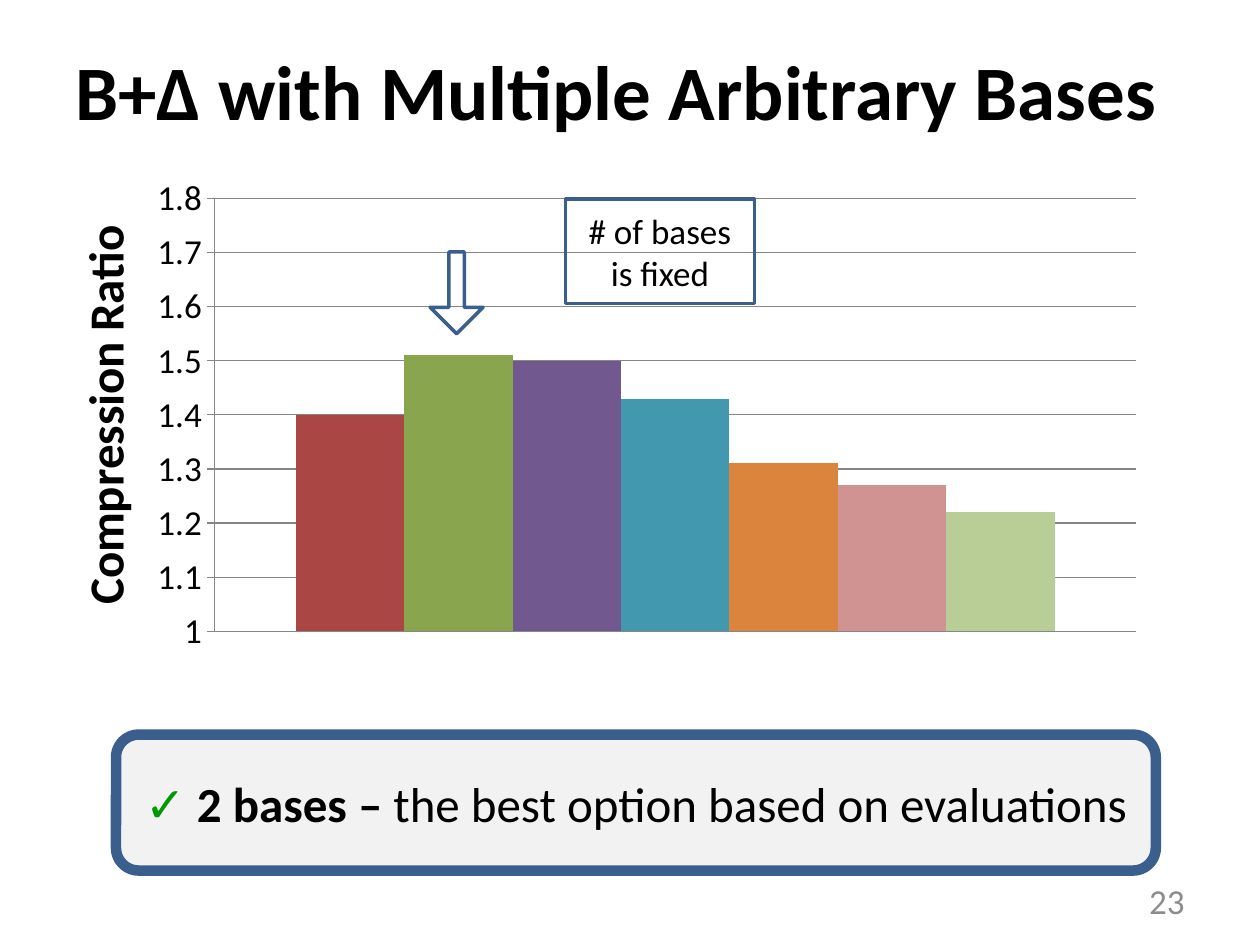
from lxml.etree import SubElement, Element
from pptx import Presentation
from pptx.chart.data import CategoryChartData
from pptx.dml.color import RGBColor
from pptx.enum.chart import XL_CHART_TYPE as ChartType, XL_TICK_MARK as TickMark
from pptx.enum.shapes import MSO_SHAPE as Shape
from pptx.enum.text import MSO_ANCHOR as Anchor, PP_ALIGN as Align
from pptx.oxml.ns import qn
from pptx.util import Cm, Pt

FONT = "Calibri"
BLACK = RGBColor(0x00, 0x00, 0x00)
GRAY = RGBColor(0x8C, 0x8C, 0x8C)
GRID = RGBColor(0x86, 0x86, 0x86)
BLUE = RGBColor(0x3A, 0x5F, 0x8C)
GREEN = RGBColor(0x00, 0x99, 0x00)
PALE = RGBColor(0xF2, 0xF2, 0xF2)

# Compression ratio, bar colour
BARS = [
    (1.4, RGBColor(0xAA, 0x46, 0x43)),
    (1.51, RGBColor(0x89, 0xA5, 0x4E)),
    (1.5, RGBColor(0x71, 0x58, 0x8F)),
    (1.43, RGBColor(0x41, 0x98, 0xAF)),
    (1.31, RGBColor(0xDB, 0x84, 0x3D)),
    (1.27, RGBColor(0xD0, 0x93, 0x92)),
    (1.22, RGBColor(0xB9, 0xCD, 0x96)),
]


def add_text(frame, text, size=20, color=BLACK, bold=False, align=Align.CENTER):
    """Append a run to the frame's first paragraph."""
    frame.word_wrap = True
    frame.vertical_anchor = Anchor.MIDDLE
    paragraph = frame.paragraphs[0]
    paragraph.alignment = align
    run = paragraph.add_run()
    run.text = text
    run.font.name = FONT
    run.font.size = Pt(size)
    run.font.bold = bold
    run.font.color.rgb = color


def set_layout(parent, index, **settings):
    """Give a chart part a manual layout, as fractions of the chart."""
    for old_layout in parent.findall(qn("c:layout")):
        parent.remove(old_layout)
    layout = Element(qn("c:layout"))
    parent.insert(index, layout)
    manual = SubElement(layout, qn("c:manualLayout"))
    for name, value in settings.items():
        SubElement(manual, qn(f"c:{name}")).set("val", str(value))


presentation = Presentation()
presentation.slide_width = Cm(25.4)
presentation.slide_height = Cm(19.05)
slide = presentation.slides.add_slide(presentation.slide_layouts[5])

title = slide.shapes.title
title.left, title.top, title.width, title.height = Cm(1), Cm(0.22), Cm(22.86), Cm(3.18)
add_text(title.text_frame, "B+Δ with Multiple Arbitrary Bases", size=44, bold=True)

page_number = slide.shapes.add_textbox(Cm(18.21), Cm(17.65), Cm(5.92), Cm(1.02))
add_text(page_number.text_frame, "23", color=GRAY, align=Align.RIGHT)

# Chart: one unnamed series per bar, so that the bars touch
chart_data = CategoryChartData()
chart_data.categories = [""]
for ratio, _ in BARS:
    chart_data.add_series("", [ratio])
chart = slide.shapes.add_chart(
    ChartType.COLUMN_CLUSTERED, Cm(1.27), Cm(3.38), Cm(22.63), Cm(11), chart_data
).chart
chart.has_title = False
chart.has_legend = False
chart.font.name = FONT
chart.font.size = Pt(20)
chart.font.color.rgb = BLACK

plot = chart.plots[0]
plot.gap_width = 150
plot.overlap = 0
plot.vary_by_categories = False
for series, (_, color) in zip(plot.series, BARS):
    series.format.fill.solid()
    series.format.fill.fore_color.rgb = color

chart.category_axis.visible = False
ratio_axis = chart.value_axis
ratio_axis.minimum_scale = 1
ratio_axis.maximum_scale = 1.8
ratio_axis.major_unit = 0.1
ratio_axis.major_tick_mark = TickMark.OUTSIDE
ratio_axis.tick_labels.number_format = "General"
ratio_axis.tick_labels.number_format_is_linked = False
ratio_axis.has_major_gridlines = True
for line in (ratio_axis.format.line, ratio_axis.major_gridlines.format.line):
    line.color.rgb = GRID
    line.width = Pt(0.75)

axis_title = ratio_axis.axis_title
add_text(axis_title.text_frame, "Compression Ratio", size=28, bold=True)
axis_title.text_frame._txBody.bodyPr.set("rot", "-5400000")
set_layout(axis_title._element, 1, xMode="edge", yMode="edge", x=0, y=0.09)
plot_area = chart._chartSpace.find(qn("c:chart")).find(qn("c:plotArea"))
set_layout(plot_area, 0, layoutTarget="inner", xMode="edge", yMode="edge",
           x=0.135, y=0.056, w=0.821, h=0.794)

# Conclusion, arrow and note
conclusion = slide.shapes.add_shape(
    Shape.ROUNDED_RECTANGLE, Cm(2.34), Cm(14.81), Cm(20.96), Cm(2.74))
arrow = slide.shapes.add_shape(Shape.DOWN_ARROW, Cm(8.67), Cm(5.08), Cm(1.07), Cm(1.65))
arrow.adjustments[0] = 0.29
note = slide.shapes.add_shape(Shape.RECTANGLE, Cm(11.4), Cm(4.01), Cm(3.81), Cm(2.11))

for shape, line_width in ((conclusion, 6), (arrow, 2), (note, 2)):
    shape.shadow.inherit = False
    shape.fill.background()
    shape.line.color.rgb = BLUE
    shape.line.width = Pt(line_width)
conclusion.fill.solid()
conclusion.fill.fore_color.rgb = PALE

add_text(conclusion.text_frame, "✓", size=28, color=GREEN, bold=True)
add_text(conclusion.text_frame, " 2 bases – ", size=28, bold=True)
add_text(conclusion.text_frame, "the best option based on evaluations", size=28)
add_text(note.text_frame, "# of bases is fixed")

presentation.save("out.pptx")
